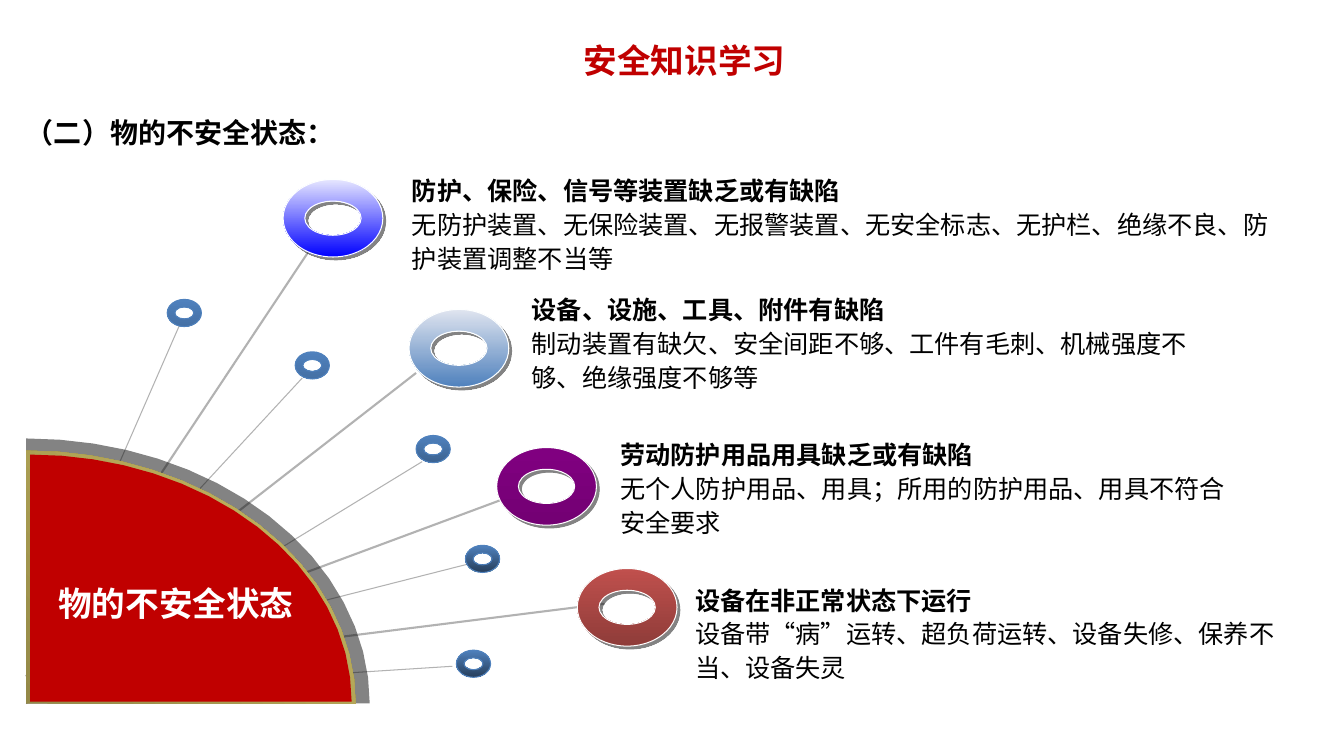
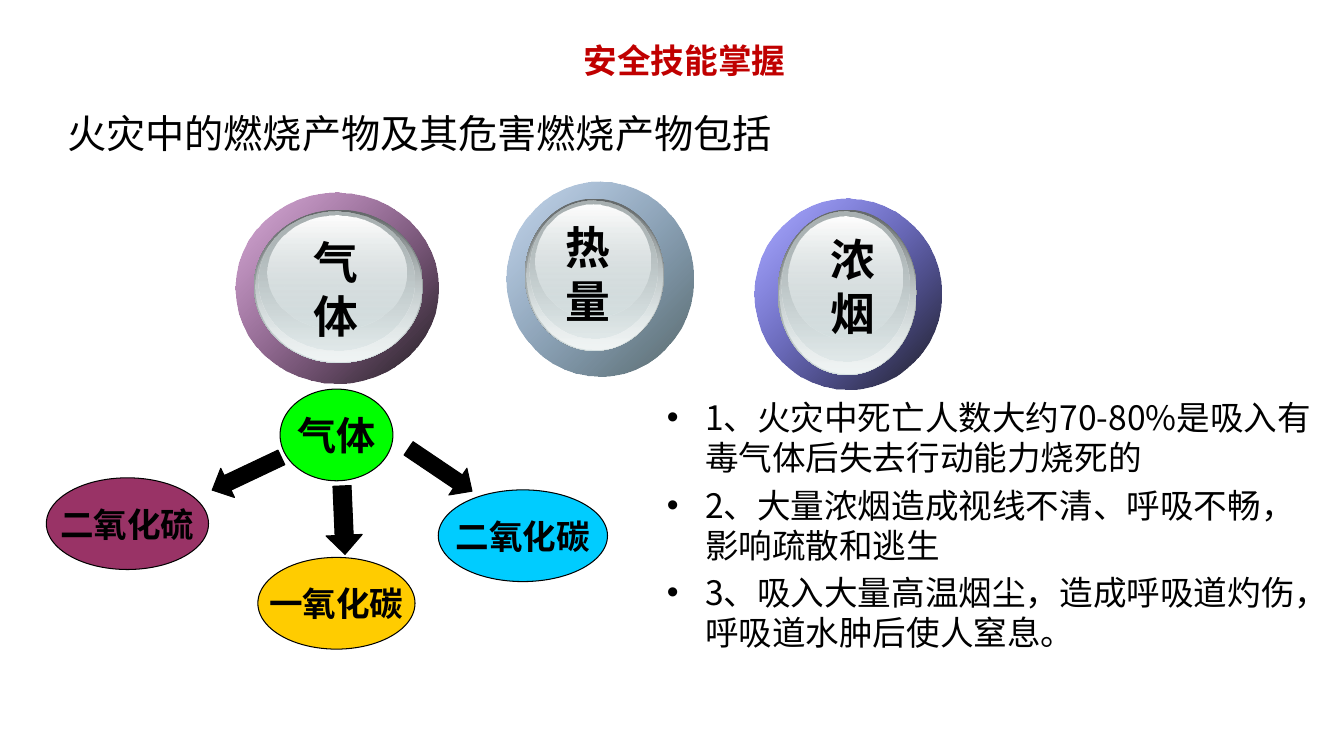
"""Build two safety training slides: unsafe states of objects and products of fire."""
import math
from lxml import etree
from pptx import Presentation
from pptx import util as u
from pptx.dml.color import RGBColor
from pptx.enum import shapes, text
from pptx.oxml.ns import qn

FONT = "Noto Sans CJK SC"
COLORS = {
    "ink": "000000", "white": "FFFFFF", "red": "C00000", "ray": "B2B2B2", "shade": "080808",
    "rim": "FEFFFF", "steel": "4F81BD", "steel1": "4570A5", "steel2": "3C6391", "steel3": "273F5C",
    "pale blue": "E7E7FF", "blue": "0000FF", "pale steel": "DFE4EF", "purple": "800080",
    "deep purple": "740074", "brick": "C0504D", "deep brick": "8F3C39", "olive": "948948",
    "gold": "CBBC63", "slate": "576869", "gray": "636869", "mist": "D6E1E2", "frost": "F1F5F5",
    "silver": "AAB2B3", "green": "00FF00", "cyan": "00CCFF", "plum": "993366", "amber": "FFCC00",
}
ALIGN = text.PP_ALIGN
OVAL = shapes.MSO_SHAPE.OVAL


def write(box, lines, size, color="ink", bold=False, align=ALIGN.LEFT, spacing=None):
    """Fill a shape with paragraphs in one style."""
    frame = box.text_frame
    frame.text = "\n".join(lines)
    frame.word_wrap = True
    frame.auto_size = text.MSO_AUTO_SIZE.NONE
    frame.vertical_anchor = text.MSO_ANCHOR.TOP
    for para in frame.paragraphs:
        para.alignment = align
        if spacing:
            para.line_spacing = u.Pt(spacing)
        for span in para.runs:
            span.font.size, span.font.bold, span.font.name = u.Pt(size), bold, FONT
            span.font.color.rgb = RGBColor.from_string(COLORS[color])
            etree.SubElement(span._r.get_or_add_rPr(), qn("a:ea"), typeface=FONT)
    return frame


def paint(shape, stops, angle=90, line=None):
    """Fill with one colour or a clockwise gradient of (colour, opacity) stops."""
    shape.shadow.inherit = False
    if len(stops) == 1:
        shape.fill.solid()
        targets = [shape.fill.fore_color]
    else:
        shape.fill.gradient()
        shape.fill.gradient_angle = 360 - angle
        targets = [stop.color for stop in shape.fill.gradient_stops]
    for target, (name, _) in zip(targets, stops):
        target.rgb = RGBColor.from_string(COLORS[name])
    for node, (_, opacity) in zip(list(shape.element.spPr.iter(qn("a:srgbClr"))), stops):
        if opacity < 100:
            etree.SubElement(node, qn("a:alpha"), val=str(opacity * 1000))
    if line:
        shape.line.color.rgb = RGBColor.from_string(COLORS[line])
        shape.line.width = u.Pt(0.75)
    else:
        shape.line.fill.background()


deck = Presentation()
deck.slide_width, deck.slide_height = u.Inches(13.34), u.Inches(7.5)
pages = []
for heading in ("安全知识学习", "安全技能掌握"):
    page = deck.slides.add_slide(deck.slide_layouts[5])
    title = page.shapes.title
    title.left, title.top, title.width, title.height = map(u.Inches, (5.36, 0.35, 2.87, 0.5))
    write(title, [heading], 24, "red", True, ALIGN.CENTER)
    pages.append(page)
states, fire = pages

box = states.shapes.add_textbox(*map(u.Inches, (0.16, 1.1, 7.54, 0.43)))
write(box, ["（二）物的不安全状态："], 20, bold=True)

for x, y, end_y, width in (
        (4.49, 6.61, 6.88, 0.75), (1.78, 3.23, 6.71, 0.75), (3, 3.75, 6.71, 0.75),
        (4.63, 5.6, 6.71, 0.75), (4.19, 4.58, 6.98, 0.75), (3.06, 2.5, 6.71, 1.5),
        (4.13, 3.7, 6.71, 1.5), (5, 4.95, 6.71, 1.5), (6, 5.99, 6.71, 1.5)):
    ray = states.shapes.add_connector(
        shapes.MSO_CONNECTOR.STRAIGHT, *map(u.Inches, (x, y, 0.26, end_y)))
    ray.line.color.rgb = RGBColor.from_string(COLORS["ray"])
    ray.line.width = u.Pt(width)
    etree.SubElement(ray.element.spPr, qn("a:effectLst"))

large_rings = [(2.81, 1.78, "pale blue", "blue"), (4.06, 3.07, "pale steel", "steel"),
               (4.93, 4.44, "purple", "deep purple"), (5.73, 5.64, "brick", "deep brick")]
small_rings = [(1.66, 2.97, "steel1"), (2.93, 3.49, "steel1"), (4.13, 4.32, "steel2"),
               (4.62, 5.41, "steel3"), (4.53, 6.45, "steel3")]
rings = [(x, y, 0.34, 0.27, "steel", low, "steel") for x, y, low in small_rings]
rings += [(x, y, 0.99, 0.77, high, low, "rim") for x, y, high, low in large_rings]
for left, top, width, height, high, low, rim in rings:
    ring = states.shapes.add_shape(
        shapes.MSO_SHAPE.DONUT, *map(u.Inches, (left, top, width, height)))
    ring.adjustments[0] = 0.28
    paint(ring, [(high, 100), (low, 100)], line=rim)
    if rim == "rim":
        effects = ring.element.spPr.find(qn("a:effectLst"))
        shadow = etree.SubElement(effects, qn("a:outerShdw"), blurRad="0",
                                  dist=str(u.Pt(2.8)), dir="2700000", algn="ctr", rotWithShape="0")
        tone = etree.SubElement(shadow, qn("a:srgbClr"), val=COLORS["shade"])
        etree.SubElement(tone, qn("a:alpha"), val="50000")

for left, top, width, height, stops in (
        (0.26, 4.35, 3.41, 2.63, [("shade", 50)]),
        (0.26, 4.47, 3.27, 2.51, [("olive", 100), ("gold", 100)]),
        (0.3, 4.51, 3.19, 2.45, [("red", 100)])):
    angles = [math.pi / 2 * step / 16 for step in range(17)]
    builder = states.shapes.build_freeform(u.Inches(left), u.Inches(top + height))
    builder.add_line_segments([(u.Inches(left + width * math.sin(a)),
                                u.Inches(top + height * (1 - math.cos(a)))) for a in angles])
    paint(builder.convert_to_shape(), stops, 315)

box = states.shapes.add_textbox(*map(u.Inches, (0.4, 5.72, 2.69, 0.52)))
write(box, ["物的不安全状态"], 24, "white", True, ALIGN.CENTER, 30)

for left, top, width, heading, detail in (
        (3.99, 1.66, 8.78, "防护、保险、信号等装置缺乏或有缺陷",
         "无防护装置、无保险装置、无报警装置、无安全标志、无护栏、绝缘不良、防护装置调整不当等"),
        (5.18, 2.84, 6.92, "设备、设施、工具、附件有缺陷",
         "制动装置有缺欠、安全间距不够、工件有毛刺、机械强度不够、绝缘强度不够等"),
        (6.06, 4.28, 6.35, "劳动防护用品用具缺乏或有缺陷",
         "无个人防护用品、用具；所用的防护用品、用具不符合安全要求"),
        (6.8, 5.72, 5.98, "设备在非正常状态下运行",
         "设备带“病”运转、超负荷运转、设备失修、保养不当、设备失灵")):
    box = states.shapes.add_textbox(*map(u.Inches, (left, top, width, 1.1)))
    frame = write(box, [heading, detail], 18, bold=True, spacing=24)
    frame.paragraphs[1].runs[0].font.bold = False

box = fire.shapes.add_textbox(*map(u.Inches, (0.57, 1.04, 7.39, 0.87)))
write(box, ["火灾中的燃烧产物及其危害燃烧产物包括"], 28)

layers = [
    (0, 0, 1, 1, [("gray", 100), ("mist", 100)]),
    (0.01, 0.01, 0.98, 0.98, [("mist", 0), ("frost", 100)]),
    (0.03, 0.01, 0.92, 0.91, [("silver", 100), ("mist", 48)]),
    (0.08, 0.04, 0.82, 0.74, [("white", 100), ("mist", 38)]),
]
for label, rim, stops, face, place in (
        ("气体", (2.34, 1.91, 2.01, 1.89), [("purple", 32), ("ink", 90)],
         (2.52, 2.08, 1.68, 1.52), (2.84, 2.28, 0.99, 1.17)),
        ("热量", (5.03, 1.8, 1.85, 1.94), [("steel", 32), ("slate", 100)],
         (5.21, 1.97, 1.38, 1.51), (5.51, 2.13, 0.66, 1.17)),
        ("浓烟", (7.49, 1.97, 1.85, 1.89), [("blue", 32), ("ink", 90)],
         (7.72, 2.08, 1.38, 1.64), (8.14, 2.25, 0.66, 1.17))):
    paint(fire.shapes.add_shape(OVAL, *map(u.Inches, rim)), stops, 45)
    left, top, width, height = face
    for dx, dy, across, down, shades in layers:
        area = (left + dx * width, top + dy * height, across * width, down * height)
        paint(fire.shapes.add_shape(OVAL, *map(u.Inches, area)), shades)
    box = fire.shapes.add_textbox(*map(u.Inches, place))
    write(box, [label], 32, bold=True, align=ALIGN.CENTER)

for label, left, top, width, color, size in (
        ("气体", 2.78, 3.86, 1.12, "green", 28), ("二氧化碳", 4.35, 4.86, 1.68, "cyan", 24),
        ("二氧化硫", 0.46, 4.74, 1.61, "plum", 24), ("一氧化碳", 2.56, 5.53, 1.56, "amber", 24)):
    gas = fire.shapes.add_shape(OVAL, *map(u.Inches, (left, top, width, 0.91)))
    paint(gas, [(color, 100)], line="ink")
    frame = write(gas, [label], size, bold=True, align=ALIGN.CENTER)
    frame.word_wrap = False
    frame.vertical_anchor = text.MSO_ANCHOR.MIDDLE

for left, top, width, height, rotation in (
        (2.07, 4.54, 0.76, 0.32, 334.7), (3.07, 4.98, 0.68, 0.36, 267.5), (3.99, 4.5, 0.76, 0.32, 214)):
    arrow = fire.shapes.add_shape(shapes.MSO_SHAPE.LEFT_ARROW, *map(u.Inches, (left, top, width, height)))
    arrow.rotation = rotation
    arrow.adjustments[0], arrow.adjustments[1] = 0.5, 0.53
    paint(arrow, [("ink", 100)], line="ink")

box = fire.shapes.add_textbox(*map(u.Inches, (6.52, 3.89, 6.74, 2.74)))
frame = write(box, ["1、火灾中死亡人数大约70-80%是吸入有毒气体后失去行动能力烧死的",
                    "2、大量浓烟造成视线不清、呼吸不畅，影响疏散和逃生",
                    "3、吸入大量高温烟尘，造成呼吸道灼伤，呼吸道水肿后使人窒息。"], 24)
for number, para in enumerate(frame.paragraphs):
    if number:
        para.space_before = u.Pt(4.8)
    props = para._p.get_or_add_pPr()
    props.set("marL", str(u.Inches(0.38)))
    props.set("indent", str(u.Inches(-0.38)))
    etree.SubElement(props, qn("a:buFont"), typeface="Arial")
    etree.SubElement(props, qn("a:buChar"), char="•")

deck.save("out.pptx")
